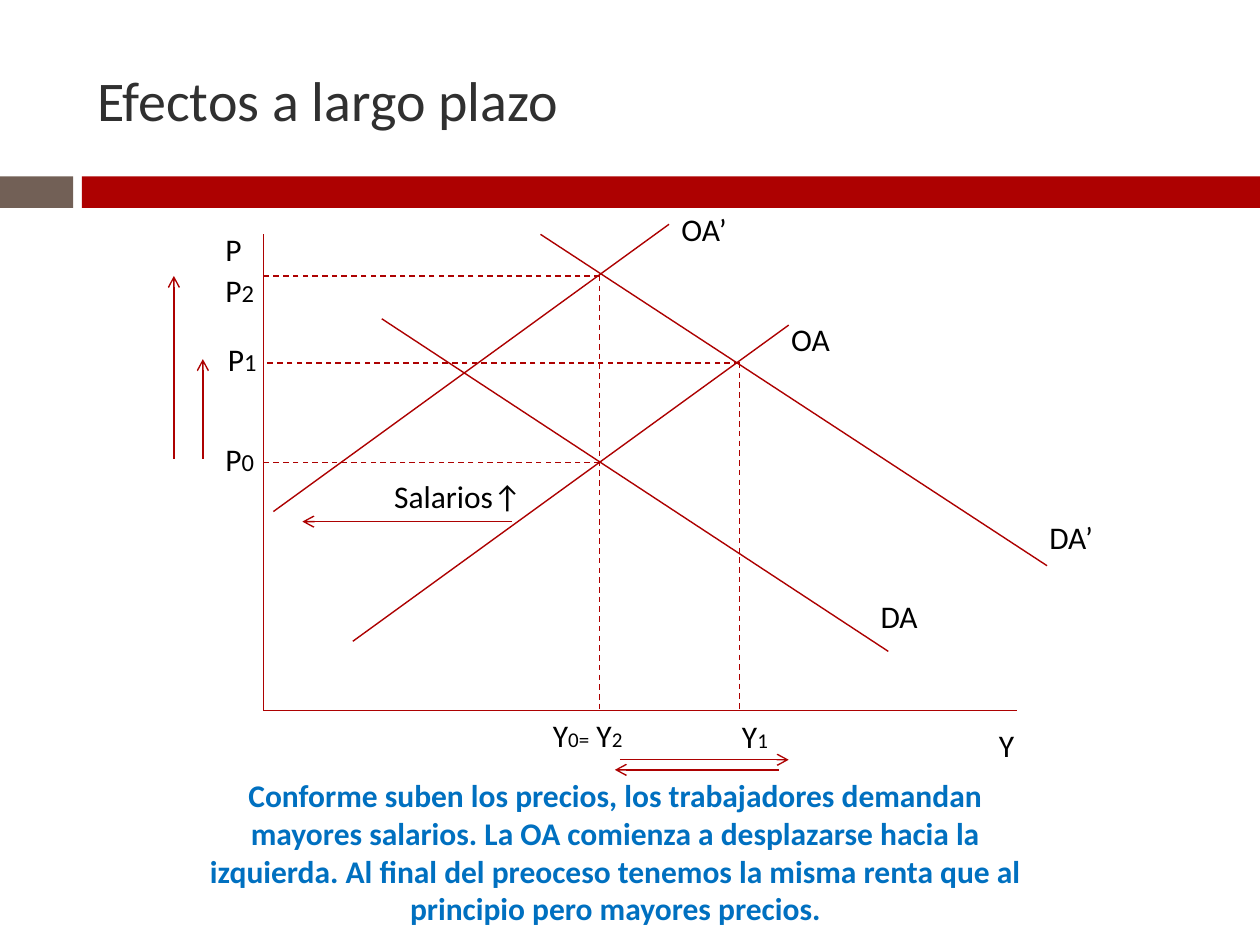
from lxml.etree import SubElement
from pptx import Presentation
from pptx.dml.color import RGBColor
from pptx.enum.dml import MSO_LINE
from pptx.enum.shapes import MSO_CONNECTOR, MSO_SHAPE
from pptx.enum.text import MSO_ANCHOR, PP_ALIGN
from pptx.oxml.ns import qn
from pptx.util import Inches, Pt

FONT = "Calibri"
RED, BROWN, BLUE, GREY, BLACK = "AD0101", "726056", "0070C0", "303030", "000000"

# Diagram landmarks, in inches
AXIS_X, AXIS_Y, AXIS_TOP, AXIS_END = 2.09, 5.64, 1.86, 8.07
Y0, Y1 = 4.76, 5.87
P0, P1, P2 = 3.67, 2.88, 2.19
ARROW_FOOT = 3.64


def color(value):
    return RGBColor.from_string(value)


def add_run(p, text, size, fill=BLACK, bold=None):
    r = p.add_run()
    r.text = text
    for name, value in {"name": FONT, "size": Pt(size), "bold": bold}.items():
        setattr(r.font, name, value)
    r.font.color.rgb = color(fill)


def add_bar(s, left, width, fill):
    sp = s.shapes.add_shape(MSO_SHAPE.RECTANGLE, Inches(left), Inches(1.4),
                            Inches(width), Inches(0.25))
    sp.shadow.inherit = False
    sp.fill.solid()
    sp.fill.fore_color.rgb = color(fill)
    sp.line.fill.background()


def add_text(s, left, top, width, runs, height=0.4, align=None, **style):
    sp = s.shapes.add_textbox(*map(Inches, (left, top, width, height)))
    tf = sp.text_frame
    tf.word_wrap = True
    p = tf.paragraphs[0]
    p.alignment = align
    for text, size in runs:
        add_run(p, text, size, **style)


def add_line(s, x1, y1, x2, y2, dashed=False, arrow=False):
    sp = s.shapes.add_connector(MSO_CONNECTOR.STRAIGHT,
                                *map(Inches, (x1, y1, x2, y2)))
    sp.line.color.rgb = color(RED)
    sp.line.width = Pt(0.79)
    if dashed:
        sp.line.dash_style = MSO_LINE.DASH
    if arrow:
        SubElement(sp.line._get_or_add_ln(), qn("a:tailEnd"), type="arrow")
    SubElement(sp._element.spPr, qn("a:effectLst"))


def set_title(s, text):
    sp = s.shapes.title
    place = {"left": 0.67, "top": 0.25, "width": 8.92, "height": 1.08}
    for name, value in place.items():
        setattr(sp, name, Inches(value))
    tf = sp.text_frame
    tf.vertical_anchor = MSO_ANCHOR.MIDDLE
    p = tf.paragraphs[0]
    p.alignment = PP_ALIGN.LEFT
    add_run(p, text, 32, GREY)


def main():
    prs = Presentation()
    prs.slide_width, prs.slide_height = Inches(10), Inches(7.5)
    s = prs.slides.add_slide(prs.slide_layouts[5])

    # Heading and band
    add_bar(s, 0, 0.58, BROWN)
    add_bar(s, 0.65, 9.35, RED)
    set_title(s, "Efectos a largo plazo")

    # Axes
    add_line(s, AXIS_X, AXIS_TOP, AXIS_X, AXIS_Y)
    add_line(s, AXIS_X, AXIS_Y, AXIS_END, AXIS_Y)

    # Supply and demand curves: OA, DA, DA', OA'
    for curve in ((2.8, 5.09, 6.26, 2.58), (3.03, 2.53, 7.05, 5.17),
                  (4.29, 1.86, 8.31, 4.49), (2.17, 4.06, 5.31, 1.78)):
        add_line(s, *curve)

    # Guides from the equilibria to the axes
    for x, y in ((Y0, P0), (Y1, P1), (Y0, P2)):
        add_line(s, x, y, AXIS_X, y, dashed=True)
    for x, y in ((Y0, P2), (Y1, P1)):
        add_line(s, x, y, x, AXIS_Y, dashed=True)

    # Shifts of prices, output and wages
    for shift in ((1.61, ARROW_FOOT, 1.61, 2.85), (1.38, ARROW_FOOT, 1.38, P2),
                  (4.92, 6.03, 6.26, 6.03), (6.18, 6.11, 4.88, 6.11),
                  (4.06, 4.14, 2.4, 4.14)):
        add_line(s, *shift, arrow=True)

    # Labels: left, top, width, then (text, size) runs
    for left, top, width, *runs in (
            (7.83, 5.71, 0.47, ("Y", 18)),
            (1.69, 1.78, 0.63, ("P", 18)),
            (1.69, 2.1, 0.63, ("P", 18), ("2", 14)),
            (1.71, 2.65, 0.63, ("P", 18), ("1", 14)),
            (1.69, 3.44, 0.63, ("P", 18), ("0", 14)),
            (6.18, 2.49, 1.02, ("OA", 18)),
            (5.31, 1.62, 1.02, ("OA’", 18)),
            (6.89, 4.69, 1.5, ("DA", 18)),
            (8.23, 4.06, 1.5, ("DA’", 18)),
            (4.29, 5.63, 1.26, ("Y", 18), ("0=", 12), (" Y", 18), ("2", 12)),
            (5.79, 5.64, 0.79, ("Y", 18), ("1", 12)),
            (3.03, 3.74, 1.34, ("Salarios↑", 18))):
        add_text(s, left, top, width, runs)

    # Conclusion
    add_text(s, 1.46, 6.11, 6.85, [(
        "Conforme suben los precios, los trabajadores demandan mayores "
        "salarios. La OA comienza a desplazarse hacia la izquierda. Al final "
        "del preoceso tenemos la misma renta que al principio pero mayores "
        "precios.", 18)], height=1.31, align=PP_ALIGN.CENTER,
        fill=BLUE, bold=True)

    prs.save("out.pptx")


if __name__ == "__main__":
    main()
